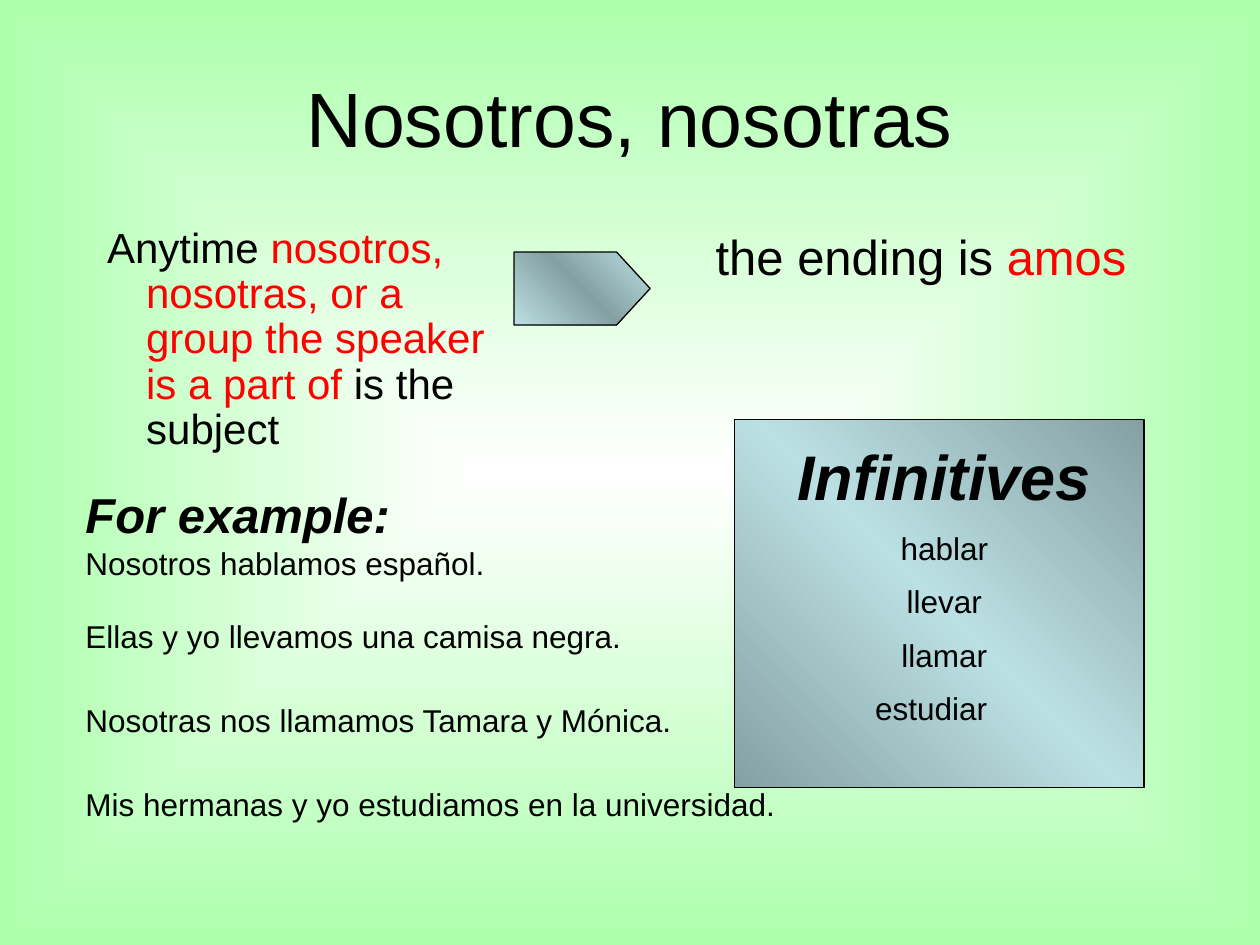
from pptx import Presentation
from pptx.dml.color import RGBColor
from pptx.enum import shapes, text
from pptx.oxml import parse_xml
from pptx.oxml.ns import nsdecls, qn
from pptx.util import Inches, Pt

THEME = {
    "font": "Arial",
    "ink": "000000",
    "accent": "FF0000",
    "panel": "BBE0E3",
    "glow": "FFFFFF",
    "edge": "ADFFAD",
    "title": 44,
    "heading": 36,
    "lead": 28,
    "rule": 24,
    "body": 18,
}
SHADE = 46275  # darkening of the panel colour, in thousandths of a percent

TITLE = "Nosotros, nosotras"
CONDITION = [
    ("Anytime ", "ink"),
    ("nosotros, nosotras, or a group the speaker is a part of ", "accent"),
    ("is the subject", "ink"),
]
ENDING = [("the ending is ", "ink"), ("amos", "accent")]
EXAMPLES_HEADING = "For example:"
EXAMPLES = [
    "Nosotros hablamos español.",
    "Ellas y yo llevamos una camisa negra.",
    "Nosotras nos llamamos Tamara y Mónica.",
    "Mis hermanas y yo estudiamos en la universidad.",
]
INFINITIVES_HEADING = "Infinitives"
INFINITIVES = ["hablar", "llevar", "llamar", "estudiar"]

TITLE_BOX = (0.5, 0.3, 9, 1.25)
CONDITION_BOX = (0.25, 1.75, 3.75, 1.67)
ENDING_BOX = (5.08, 1.75, 4.42, 4.95)
ARROW_BOX = (4.08, 2, 1.08, 0.58)
PANEL_BOX = (5.83, 3.33, 3.25, 2.92)
INFINITIVES_BOX = (6.08, 3.42, 2.83, 2.51)
EXAMPLES_BOX = (0.58, 3.8, 7.67, 0.87)
SENTENCE_TOP, SENTENCE_STEP = 4.85, 0.665
SENTENCE_SIZE = (8.08, 0.4)


def color(name):
    return RGBColor.from_string(THEME[name])


def place(shape, box):
    shape.left, shape.top, shape.width, shape.height = map(Inches, box)


def style(paragraph, size, strong=False):
    font = paragraph.font
    font.name, font.size = THEME["font"], Pt(THEME[size])
    font.bold = font.italic = strong
    font.color.rgb = color("ink")


def set_gradient(fill, owner, stops, direction):
    """Stops are (percent, theme colour, shaded); direction is XML."""
    fill.gradient()
    old = next(owner.iter(qn("a:gradFill")))
    stop_xml = "".join(
        f'<a:gs pos="{percent * 1000}"><a:srgbClr val="{THEME[name]}">'
        + (f'<a:shade val="{SHADE}"/>' if shaded else "")
        + "</a:srgbClr></a:gs>"
        for percent, name, shaded in stops
    )
    old.getparent().replace(old, parse_xml(
        f'<a:gradFill {nsdecls("a")} rotWithShape="1">'
        f"<a:gsLst>{stop_xml}</a:gsLst>{direction}</a:gradFill>"))


def add_metal_shape(slide, kind, box, dark_middle):
    shape = slide.shapes.add_shape(kind, *map(Inches, box))
    shape.shadow.inherit = False
    stops = [(percent, "panel", (percent == 50) == dark_middle)
             for percent in (0, 50, 100)]
    set_gradient(shape.fill, shape.element, stops,
                 '<a:lin ang="18900000" scaled="1"/>')
    shape.line.color.rgb = color("ink")
    shape.line.width = Pt(0.75)
    return shape


def fill_statement(placeholder, box, runs, size):
    """Write one unbulleted second-level paragraph with a hanging indent."""
    place(placeholder, box)
    frame = placeholder.text_frame
    frame.auto_size = text.MSO_AUTO_SIZE.NONE
    paragraph = frame.paragraphs[0]
    paragraph.level = 1
    style(paragraph, size)
    properties = paragraph._p.get_or_add_pPr()
    properties.set("marL", str(Inches(0.81)))
    properties.set("indent", str(Inches(-0.31)))
    properties.insert(0, parse_xml(f'<a:buNone {nsdecls("a")}/>'))
    for words, name in runs:
        run = paragraph.add_run()
        run.text = words
        run.font.color.rgb = color(name)
    return paragraph


def add_text(slide, box, lines, heading_size=None):
    """Add a text box; with heading_size, the first line is a heading."""
    frame = slide.shapes.add_textbox(*map(Inches, box)).text_frame
    frame.word_wrap = True
    for index, line in enumerate(lines):
        paragraph = frame.add_paragraph() if index else frame.paragraphs[0]
        paragraph.text = line
        heading = heading_size is not None and index == 0
        style(paragraph, heading_size if heading else "body", heading)
    return frame


def main():
    presentation = Presentation()
    presentation.slide_width, presentation.slide_height = Inches(10), Inches(7.5)
    slide = presentation.slides.add_slide(presentation.slide_layouts[3])
    set_gradient(
        slide.background.fill, slide.element,
        [(0, "glow", False), (100, "edge", False)],
        '<a:path path="shape">'
        '<a:fillToRect l="50000" t="50000" r="50000" b="50000"/></a:path>')

    title, condition, ending = slide.placeholders
    place(title, TITLE_BOX)
    title.text_frame.text = TITLE
    title.text_frame.vertical_anchor = text.MSO_ANCHOR.MIDDLE
    title.text_frame.auto_size = text.MSO_AUTO_SIZE.NONE
    title.text_frame.paragraphs[0].alignment = text.PP_ALIGN.CENTER
    style(title.text_frame.paragraphs[0], "title")

    fill_statement(condition, CONDITION_BOX, CONDITION, "rule").line_spacing = 0.9
    fill_statement(ending, ENDING_BOX, ENDING, "lead")

    arrow = add_metal_shape(slide, shapes.MSO_SHAPE.PENTAGON, ARROW_BOX, True)
    arrow.adjustments[0] = 0.46
    add_metal_shape(slide, shapes.MSO_SHAPE.RECTANGLE, PANEL_BOX, False)

    add_text(slide, EXAMPLES_BOX, [EXAMPLES_HEADING, EXAMPLES[0]], "lead")
    for row, sentence in enumerate(EXAMPLES[1:]):
        top = SENTENCE_TOP + row * SENTENCE_STEP
        add_text(slide, (EXAMPLES_BOX[0], top, *SENTENCE_SIZE), [sentence])

    infinitives = add_text(slide, INFINITIVES_BOX,
                           [INFINITIVES_HEADING, *INFINITIVES], "heading")
    for paragraph in infinitives.paragraphs:
        paragraph.alignment = text.PP_ALIGN.CENTER
        paragraph._p.get_or_add_pPr().insert(0, parse_xml(
            f'<a:spcBef {nsdecls("a")}><a:spcPct val="50000"/></a:spcBef>'))
    # The last verb sits slightly left of centre.
    infinitives.paragraphs[-1]._p.pPr.set("marR", str(Inches(0.21)))

    presentation.save("out.pptx")


if __name__ == "__main__":
    main()
